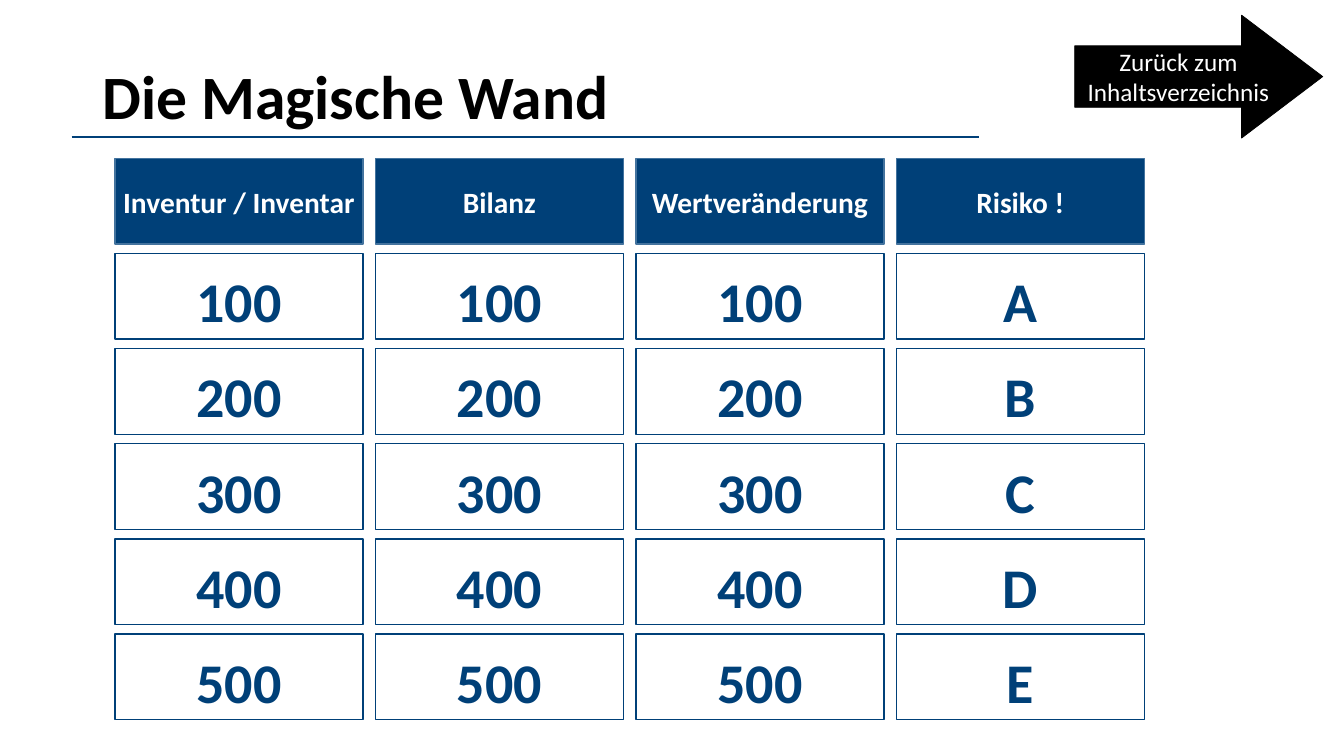
from lxml import etree
from pptx import Presentation
from pptx.dml.color import RGBColor
from pptx.enum.shapes import MSO_CONNECTOR, MSO_SHAPE
from pptx.enum.text import MSO_ANCHOR, PP_ALIGN
from pptx.oxml.ns import qn
from pptx.util import Pt

RECTANGLE, RIGHT_ARROW = MSO_SHAPE.RECTANGLE, MSO_SHAPE.RIGHT_ARROW
STRAIGHT = MSO_CONNECTOR.STRAIGHT
MIDDLE = MSO_ANCHOR.MIDDLE
LEFT, CENTER = PP_ALIGN.LEFT, PP_ALIGN.CENTER

NAVY = RGBColor(0x00, 0x40, 0x78)
STEEL = RGBColor(0x43, 0x73, 0x9E)
WHITE = RGBColor(0xFF, 0xFF, 0xFF)
BLACK = RGBColor(0x00, 0x00, 0x00)

FONT = "Calibri"
EMU_PER_PX = 9144

CATEGORIES = ["Inventur / Inventar", "Bilanz", "Wertveränderung", "Risiko !"]
POINTS = ["100", "200", "300", "400", "500"]
RISKS = ["A", "B", "C", "D", "E"]


def px(length):
    """Turn px into whole EMU."""
    return round(length * EMU_PER_PX)


def write(frame, text, size, color, bold=True, align=CENTER):
    """Put one vertically centred paragraph into a text frame."""
    frame.word_wrap = True
    frame.vertical_anchor = MIDDLE
    paragraph = frame.paragraphs[0]
    paragraph.text = text
    paragraph.alignment = align
    font = paragraph.font
    font.name, font.size, font.bold = FONT, Pt(size), bold
    font.color.rgb = color
    return paragraph


def add_block(slide, kind, box, fill, line, line_width):
    """Add a filled, outlined shape without a shadow."""
    block = slide.shapes.add_shape(kind, *map(px, box))
    block.shadow.inherit = False
    block.fill.solid()
    block.fill.fore_color.rgb = fill
    block.line.color.rgb = line
    block.line.width = Pt(line_width)
    return block


def add_heading(slide, left, top, width, height):
    """Place the title and the rule beneath it."""
    title = slide.shapes.add_textbox(*map(px, (left, top, width, height)))
    paragraph = write(title.text_frame, "Die Magische Wand", 44, BLACK, align=LEFT)
    paragraph.line_spacing = 0.9

    rule_left, rule_y = left - 21, top + 110
    rule = slide.shapes.add_connector(
        STRAIGHT, *map(px, (rule_left, rule_y, rule_left + 900, rule_y)))
    rule.line.color.rgb = NAVY
    rule.line.width = Pt(1.5)
    etree.SubElement(rule._element.spPr, qn("a:effectLst"))


def add_tile(slide, box, text, size, color, fill, line, text_drop):
    """Place one tile of the quiz wall with its label."""
    tile = add_block(slide, RECTANGLE, box, fill, line, 1)
    frame = tile.text_frame
    frame.margin_left = frame.margin_right = frame.margin_bottom = 0
    frame.margin_top = px(2 * text_drop)
    write(frame, text, size, color)


def add_wall(slide, left, top, width, height):
    """Place the quiz wall: a column per category, its name on top."""
    tile_width, tile_height = 246, 85
    column_step = (width - tile_width) / (len(CATEGORIES) - 1)
    row_step = (height - tile_height) / len(POINTS)
    for column, category in enumerate(CATEGORIES):
        fields = RISKS if category == CATEGORIES[-1] else POINTS
        for row, text in enumerate([category, *fields]):
            box = (left + column * column_step, top + row * row_step,
                   tile_width, tile_height)
            if row == 0:
                add_tile(slide, box, text, 21, WHITE, NAVY, STEEL, 1)
            else:
                add_tile(slide, box, text, 40, NAVY, WHITE, NAVY, 4)


def add_back_arrow(slide, left, top, width, height):
    """Place the arrow that points back to the table of contents."""
    arrow = add_block(slide, RIGHT_ARROW, (left, top, width, height), BLACK, BLACK, 0.5)
    arrow.adjustments[0] = 0.5
    arrow.adjustments[1] = 0.66
    write(arrow.text_frame, "Zurück zum Inhaltsverzeichnis", 18, WHITE, bold=False)


def main():
    """Build and save the slide."""
    presentation = Presentation()
    presentation.slide_width, presentation.slide_height = px(1333), px(750)
    slide = presentation.slides.add_slide(presentation.slide_layouts[6])
    add_heading(slide, 92, 26, 1150, 145)
    add_wall(slide, 114, 157, 1021, 557)
    add_back_arrow(slide, 1066, 15, 246, 122)
    presentation.save("out.pptx")


if __name__ == "__main__":
    main()
